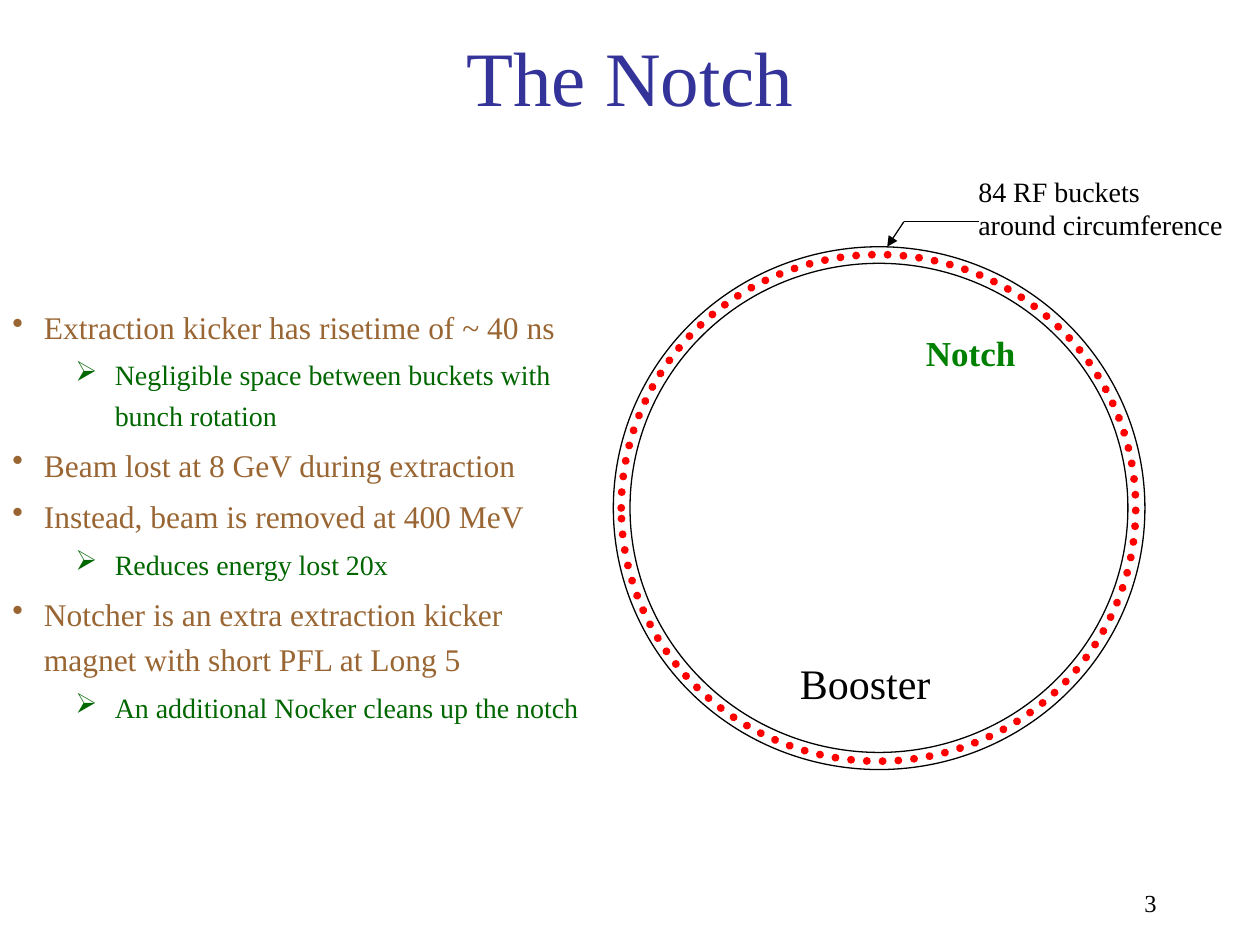
from lxml.etree import SubElement
from pptx import Presentation
from pptx.dml.color import RGBColor
from pptx.enum.dml import MSO_LINE
from pptx.enum.shapes import MSO_CONNECTOR, MSO_SHAPE
from pptx.enum.text import MSO_ANCHOR, PP_ALIGN
from pptx.oxml.ns import qn
from pptx.util import Pt

BLACK = RGBColor(0x00, 0x00, 0x00)
BLUE = RGBColor(0x33, 0x33, 0x99)
BROWN = RGBColor(0x99, 0x66, 0x33)
DARK_GREEN = RGBColor(0x00, 0x66, 0x00)
GREEN = RGBColor(0x00, 0x80, 0x00)
RED = RGBColor(0xFF, 0x00, 0x00)
FONT = "Times New Roman"

prs = Presentation()
prs.slide_width, prs.slide_height = Pt(720), Pt(540)
s = prs.slides.add_slide(prs.slide_layouts[6])


def add_text(box, lines, size, color, align=PP_ALIGN.LEFT, wrap=False, bold=False):
    tf = s.shapes.add_textbox(*[Pt(v) for v in box]).text_frame
    tf.word_wrap = wrap
    tf.text = "\n".join(lines)
    for p in tf.paragraphs:
        p.alignment = align
        p.font.name, p.font.size, p.font.bold = FONT, Pt(size), bold
        p.font.color.rgb = color
    return tf


add_text((606.2, 504, 61.9, 23.8), ["3"], 14, BLACK, PP_ALIGN.RIGHT, True)
title = add_text((36, 12, 648, 63), ["The Notch"], 44, BLUE, PP_ALIGN.CENTER, True)
title.vertical_anchor = MSO_ANCHOR.MIDDLE

points = [
    (0, "Extraction kicker has risetime of ~ 40 ns"),
    (1, "Negligible space between buckets with bunch rotation"),
    (0, "Beam lost at 8 GeV during extraction"),
    (0, "Instead, beam is removed at 400 MeV"),
    (1, "Reduces energy lost 20x"),
    (0, "Notcher is an extra extraction kicker magnet with short PFL at Long 5"),
    (1, "An additional Nocker cleans up the notch"),
]
styles = [(18, BROWN, "•", 18, -18), (16, DARK_GREEN, "➢", 58.5, -22.5)]
body = add_text((0, 168, 348, 300), [text for _, text in points], 18, BROWN, wrap=True)
for p, (level, _) in zip(body.paragraphs, points):
    size, color, bullet, margin, indent = styles[level]
    p.level = level
    p.font.size = Pt(size)
    p.font.color.rgb = color
    p.line_spacing = 1.2
    p.space_before = Pt(size * 0.2)
    pPr = p._p.get_or_add_pPr()
    pPr.set("marL", str(Pt(margin)))
    pPr.set("indent", str(Pt(indent)))
    bu = pPr.makeelement(qn("a:buChar"), {"char": bullet})
    pPr.insert_element_before(bu, "a:tabLst", "a:defRPr", "a:extLst")

rings = [
    (355, 145.5, 294, 289.5, RED, 4.5),
    (360, 150.5, 284.5, 279.5, BLACK, 0.75),
    (350.5, 141, 303.75, 298.75, BLACK, 0.75),
]
for x, y, w, h, color, width in rings:
    sp = s.shapes.add_shape(MSO_SHAPE.OVAL, Pt(x), Pt(y), Pt(w), Pt(h))
    sp.shadow.inherit = False
    sp.fill.background()
    sp.line.color.rgb = color
    sp.line.width = Pt(width)
    if color == RED:
        sp.line.dash_style = MSO_LINE.ROUND_DOT
        sp.line._get_or_add_ln().set("cap", "rnd")

add_text((552, 96, 154.8, 46), ["84 RF buckets", "around circumference"], 16, BLACK)
for x, y, arrow in [(507, 141, True), (559.5, 126.75, False)]:
    cn = s.shapes.add_connector(MSO_CONNECTOR.STRAIGHT, Pt(516.5), Pt(126.75), Pt(x), Pt(y))
    cn.line.color.rgb = BLACK
    cn.line.width = Pt(0.75)
    if arrow:
        SubElement(cn.line._get_or_add_ln(), qn("a:tailEnd"), type="triangle")
    SubElement(cn._element.spPr, qn("a:effectLst"))

add_text((522, 186, 65.5, 31), ["Notch"], 20, GREEN, bold=True)
add_text((450, 372, 89.3, 36), ["Booster"], 24, BLACK)

prs.save("out.pptx")
